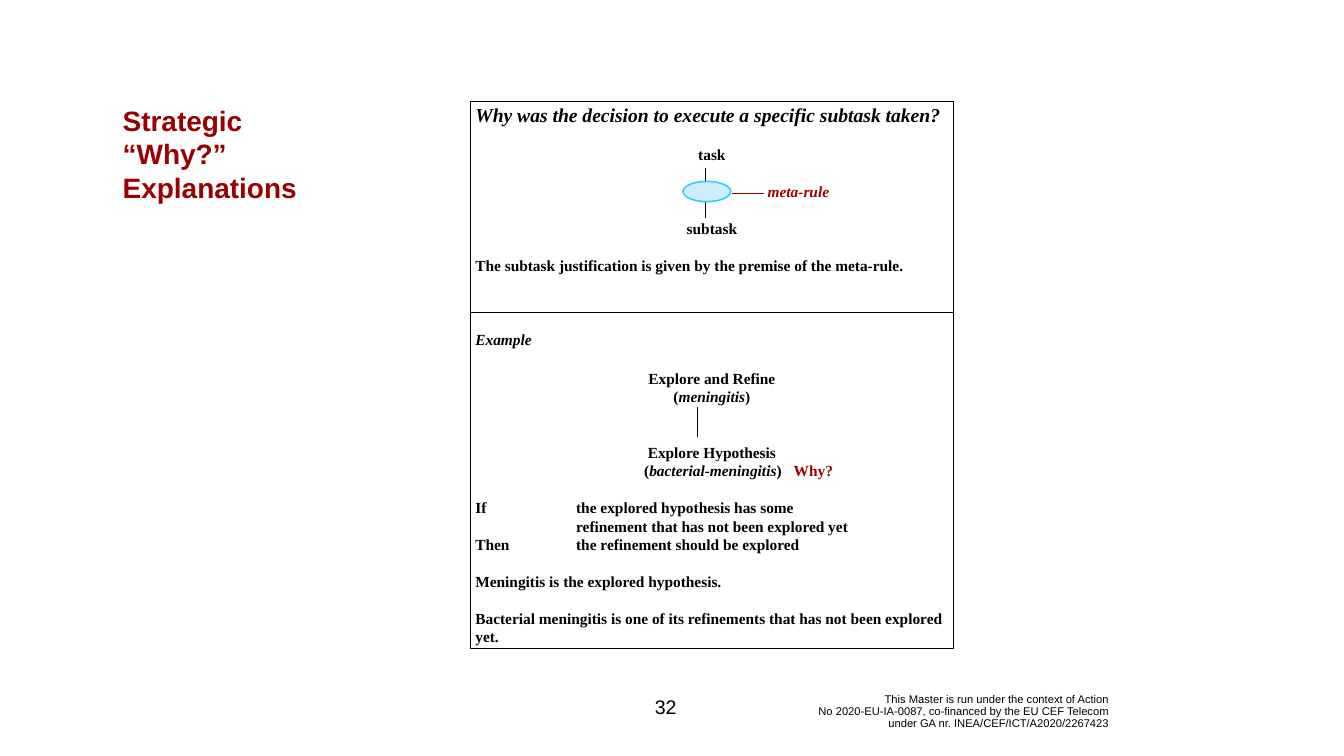
from dataclasses import dataclass

import pptx
import pptx.dml.color
import pptx.enum.shapes
import pptx.enum.text
import pptx.oxml
import pptx.oxml.ns
import pptx.util

Align = pptx.enum.text.PP_ALIGN
Anchor = pptx.enum.text.MSO_ANCHOR
Shapes = pptx.enum.shapes.MSO_SHAPE

COLUMNS, ROWS = 80, 45  # square grid cells, three to the inch
BLACK, RED = "000000", "990000"
SERIF, SANS = "Times New Roman", "Arial"
LEADING = 1.2
BODY_SIZE = 22


@dataclass(frozen=True)
class Area:
    column: float
    row: float
    columns: float
    rows: float


@dataclass(frozen=True)
class Line:
    start: tuple[float, float]
    end: tuple[float, float]
    color: str = BLACK


@dataclass(frozen=True)
class Span:
    text: str
    italic: bool = False
    color: str = BLACK


@dataclass(frozen=True)
class Para:
    spans: tuple[Span, ...]
    gap: float = 0  # empty body lines above
    align: Align = Align.LEFT
    tabs: tuple[float, ...] = ()
    size: float = BODY_SIZE


def cells(count: float) -> int:
    return pptx.util.Inches(count / 3)


def rgb(color: str) -> pptx.dml.color.RGBColor:
    return pptx.dml.color.RGBColor.from_string(color)


def box(area: Area) -> tuple[int, ...]:
    return tuple(map(cells, (area.column, area.row, area.columns, area.rows)))


def add_tabs(paragraph, stops: tuple[float, ...]) -> None:
    tab_list = pptx.oxml.parse_xml(f"<a:tabLst {pptx.oxml.ns.nsdecls('a')}/>")
    for stop in stops:
        tab = tab_list.makeelement(pptx.oxml.ns.qn("a:tab"), {"pos": str(cells(stop)), "algn": "l"})
        tab_list.append(tab)
    paragraph._p.get_or_add_pPr().append(tab_list)


def add_span(paragraph, span: Span, size: float, font: str, bold: bool) -> None:
    run = paragraph.add_run()
    run.text = span.text
    run.font.name, run.font.size = font, pptx.util.Pt(size)
    run.font.bold, run.font.italic = bold, span.italic
    run.font.color.rgb = rgb(span.color)


def prepare_frame(frame, anchor: Anchor) -> None:
    frame.word_wrap = True
    frame.auto_size = pptx.enum.text.MSO_AUTO_SIZE.NONE
    frame.vertical_anchor = anchor


def add_panel(slide, area: Area, paras: list[Para]) -> None:
    panel = add_outlined(slide, Shapes.RECTANGLE, area, BLACK, 0.75)
    frame = panel.text_frame
    prepare_frame(frame, Anchor.TOP)
    for index, para in enumerate(paras):
        paragraph = frame.add_paragraph() if index else frame.paragraphs[0]
        if para.tabs:
            add_tabs(paragraph, para.tabs)
        paragraph.alignment = para.align
        paragraph.line_spacing = pptx.util.Pt(para.size * LEADING)
        paragraph.space_before = pptx.util.Pt(para.gap * BODY_SIZE * LEADING)
        for span in para.spans:
            add_span(paragraph, span, para.size, SERIF, True)


def add_outlined(slide, kind: Shapes, area: Area, color: str, width: float, fill: str | None = None):
    shape = slide.shapes.add_shape(kind, *box(area))
    shape.shadow.inherit = False
    if fill:
        shape.fill.solid()
        shape.fill.fore_color.rgb = rgb(fill)
    else:
        shape.fill.background()
    shape.line.color.rgb = rgb(color)
    shape.line.width = pptx.util.Pt(width)
    return shape


def add_line(slide, line: Line) -> None:
    connector = slide.shapes.add_connector(
        pptx.enum.shapes.MSO_CONNECTOR.STRAIGHT, *map(cells, line.start + line.end))
    connector.line.color.rgb = rgb(line.color)
    connector.line.width = pptx.util.Pt(0.75)
    effects = pptx.oxml.parse_xml(f"<a:effectLst {pptx.oxml.ns.nsdecls('a')}/>")
    connector._element.spPr.append(effects)


def add_label(slide, area: Area, lines: list[str], size: float, align: Align, spacing: float = 1.0) -> None:
    frame = slide.shapes.add_textbox(*box(area)).text_frame
    prepare_frame(frame, Anchor.MIDDLE)
    paragraph = frame.paragraphs[0]
    paragraph.alignment, paragraph.line_spacing = align, spacing
    for index, text in enumerate(lines):
        if index:
            paragraph.add_line_break()
        add_span(paragraph, Span(text), size, SANS, False)


def set_title(slide, area: Area, text: str) -> None:
    title = slide.shapes.title
    title.left, title.top, title.width, title.height = box(area)
    prepare_frame(title.text_frame, Anchor.TOP)
    paragraph = title.text_frame.paragraphs[0]
    paragraph.alignment = Align.LEFT
    paragraph.line_spacing = pptx.util.Pt(40 * LEADING)
    paragraph.space_before = pptx.util.Pt(0)
    add_span(paragraph, Span(text, color=RED), 40, SANS, True)


def plain(text: str, gap: float = 0, align: Align = Align.LEFT, tabs: tuple[float, ...] = ()) -> Para:
    return Para((Span(text),), gap, align, tabs)


RULE_TABS = (6,)
EXPLANATION = [
    Para((Span("Why was the decision to execute a specific subtask taken?", True),), size=28),
    plain("task", 1, Align.CENTER),
    Para((Span("\t"), Span("meta-rule", True, RED)), 1, tabs=(17.4,)),
    plain("subtask", 1, Align.CENTER),
    plain("The subtask justification is given by the premise of the meta-rule.", 1),
    Para((Span("Example", True),), 3),
    plain("Explore and Refine", 1.1, Align.CENTER),
    Para((Span("("), Span("meningitis", True), Span(")")), align=Align.CENTER),
    plain("Explore Hypothesis", 2, Align.CENTER),
    Para((Span("\t("), Span("bacterial-meningitis", True), Span(")\t"), Span("Why?", color=RED)),
         tabs=(10.05, 18.95)),
    plain("If\tthe explored hypothesis has some", 1, tabs=RULE_TABS),
    plain("\trefinement that has not been explored yet", tabs=RULE_TABS),
    plain("Then\tthe refinement should be explored", tabs=RULE_TABS),
    plain("Meningitis is the explored hypothesis.", 1),
    plain("Bacterial meningitis is one of its refinements that has not been explored yet.", 1),
]
PANEL = Area(28, 6, 28.75, 32.6)
TASK_LINKS = [
    Line((42, 10), (42, 12.95)),
    Line((43.55, 11.5), (45.5, 11.5), RED),
    Line((PANEL.column, 18.6), (PANEL.column + PANEL.columns, 18.6)),
    Line((41.5, 24.2), (41.5, 26)),
]
FUNDING = [
    "This Master is run under the context of Action",
    "No 2020-EU-IA-0087, co-financed by the EU CEF Telecom",
    "under GA nr. INEA/CEF/ICT/A2020/2267423",
]


def main() -> None:
    deck = pptx.Presentation()
    deck.slide_width, deck.slide_height = cells(COLUMNS), cells(ROWS)
    slide = deck.slides.add_slide(deck.slide_layouts.get_by_name("Title Only"))
    set_title(slide, Area(7, 6, 14, 6.35), "Strategic “Why?” Explanations")
    add_label(slide, Area(45.05, 41.2, 21.25, 2.3), FUNDING, 16, Align.RIGHT, 0.9)
    add_label(slide, Area(37.95, 40.85, 3.35, 2.4), ["32"], 28, Align.CENTER)
    add_panel(slide, PANEL, EXPLANATION)
    for link in TASK_LINKS:
        add_line(slide, link)
    add_outlined(slide, Shapes.OVAL, Area(40.65, 10.8, 2.85, 1.2), "33CCFF", 2.25, "CCECFF")
    deck.save("out.pptx")


if __name__ == "__main__":
    main()
